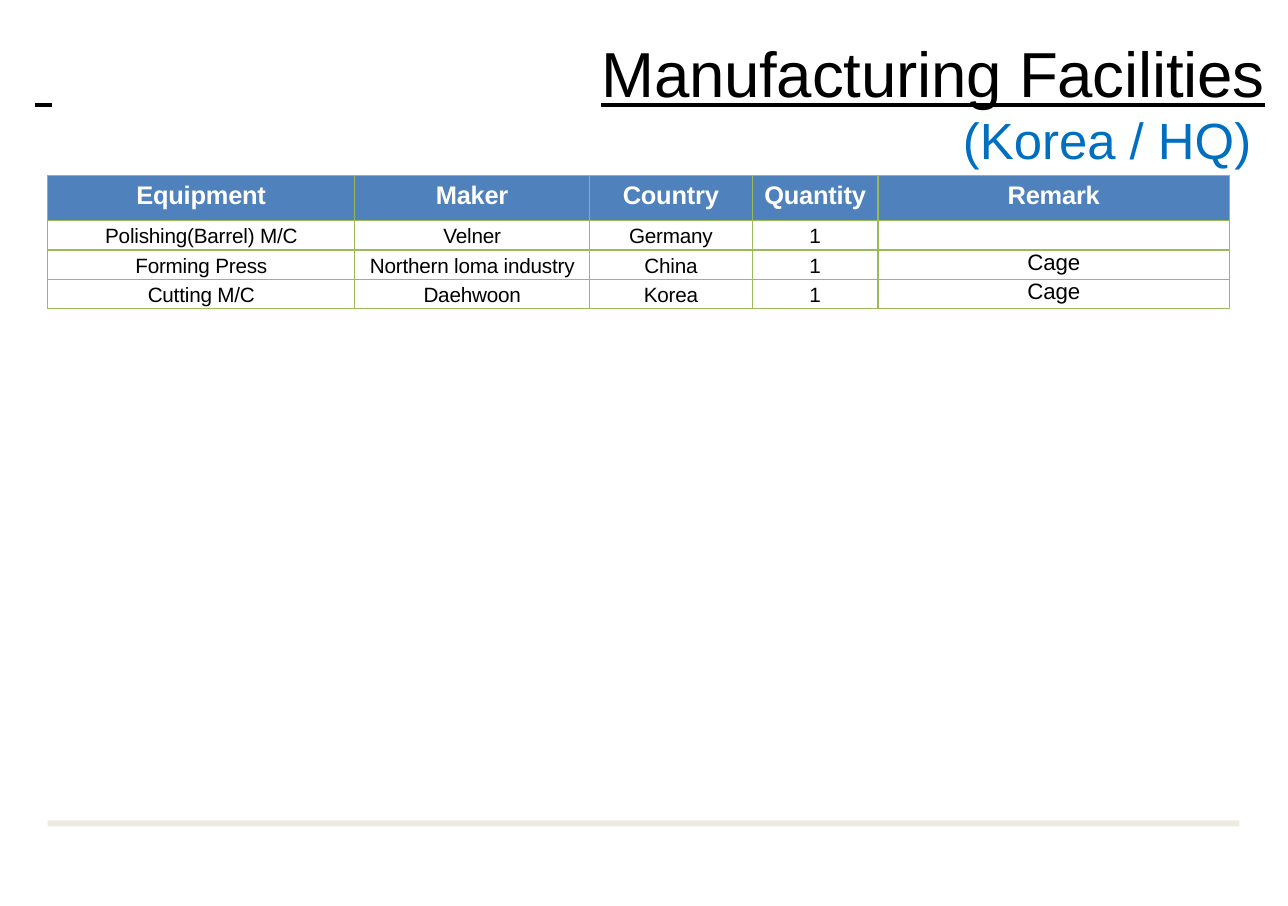
from lxml import etree
from pptx import Presentation
from pptx.dml.color import RGBColor
from pptx.enum.shapes import MSO_SHAPE
from pptx.enum.text import MSO_ANCHOR, MSO_AUTO_SIZE, PP_ALIGN
from pptx.oxml.ns import qn
from pptx.util import Cm, Pt

RECTANGLE = MSO_SHAPE.RECTANGLE
TOP = MSO_ANCHOR.TOP
NO_FIT = MSO_AUTO_SIZE.NONE
LEFT, CENTER, RIGHT = PP_ALIGN.LEFT, PP_ALIGN.CENTER, PP_ALIGN.RIGHT

# Content
TITLE = " \tManufacturing Facilities"
SUBTITLE = "(Korea / HQ)"
HEADER = ("Equipment", "Maker", "Country", "Quantity", "Remark")
MACHINES = [
    ("Polishing(Barrel) M/C", "Velner", "Germany", "1", ""),
    ("Forming Press", "Northern loma industry", "China", "1", "Cage"),
    ("Cutting M/C", "Daehwoon", "Korea", "1", "Cage"),
]
COLUMN_WIDTHS = (6.81, 5.21, 3.61, 2.79, 7.8)
HEADER_HEIGHT, ROW_HEIGHT = 1.01, 0.65
REMARK = len(HEADER) - 1


class Theme:
    font = "Arial"
    black = RGBColor(0x00, 0x00, 0x00)
    white = RGBColor(0xFF, 0xFF, 0xFF)
    blue = RGBColor(0x00, 0x6F, 0xC0)
    header_fill = RGBColor(0x4F, 0x81, 0xBC)
    bar = RGBColor(0xED, 0xEB, 0xE0)
    border = "9BBA58"
    border_width = Pt(1)
    title = {"size": Pt(40), "underline": True, "bold": False}
    subtitle = {"size": Pt(32), "underline": False, "bold": False}
    header = {"size": Pt(16), "bold": True}
    body = {"size": Pt(13), "bold": False}
    remark = {"size": Pt(14), "bold": False}
    tight = "-10"  # letter spacing in hundredths of a point


def set_all(target, values):
    for name, value in values.items():
        setattr(target, name, value)


def write(para, text, color, style, align):
    para.alignment = align
    if not text:  # keeps an empty cell as low as its row
        etree.SubElement(para._p, qn("a:endParaRPr"), sz=str(int(style["size"].pt * 100)))
        return
    span = para.add_run()
    span.text = text
    set_all(span.font, {"name": Theme.font, **style})
    span.font.color.rgb = color
    if style is not Theme.subtitle:
        span._r.get_or_add_rPr().set("spc", Theme.tight)


def add_borders(cell):
    properties = cell._tc.get_or_add_tcPr()
    for position, side in enumerate(("a:lnL", "a:lnR", "a:lnT", "a:lnB")):
        line = etree.Element(qn(side), w=str(Theme.border_width))
        fill = etree.SubElement(line, qn("a:solidFill"))
        etree.SubElement(fill, qn("a:srgbClr"), val=Theme.border)
        properties.insert(position, line)


def add_bar(page):
    bar = page.shapes.add_shape(RECTANGLE, Cm(1.06), Cm(18.21), Cm(26.44), Cm(0.13))
    bar.shadow.inherit = False
    bar.fill.solid()
    bar.fill.fore_color.rgb = Theme.bar
    bar.line.fill.background()


def fill_title(page):
    title = page.shapes.title
    set_all(title, {"left": Cm(0.34), "top": Cm(0.79), "width": Cm(27.89), "height": Cm(3)})
    frame = title.text_frame
    set_all(frame, {"margin_left": 0, "margin_right": 0, "margin_top": Cm(0.03),
                    "margin_bottom": 0, "vertical_anchor": TOP,
                    "auto_size": NO_FIT, "word_wrap": True})

    heading = frame.paragraphs[0]
    properties = heading._p.get_or_add_pPr()
    properties.set("marL", str(Cm(0.43)))
    tabs = etree.SubElement(properties, qn("a:tabLst"))
    etree.SubElement(tabs, qn("a:tab"), pos=str(Cm(12.57)), algn="l")
    heading.line_spacing = Pt(46.4)
    write(heading, TITLE, Theme.black, Theme.title, LEFT)

    location = frame.add_paragraph()
    location._p.get_or_add_pPr().set("marR", str(Cm(0.46)))
    location.line_spacing = Pt(36.8)
    write(location, SUBTITLE, Theme.blue, Theme.subtitle, RIGHT)


def add_equipment_table(page):
    rows = [HEADER, *MACHINES]
    height = HEADER_HEIGHT + ROW_HEIGHT * len(MACHINES)
    table = page.shapes.add_table(len(rows), len(HEADER), Cm(1.06), Cm(3.89),
                                  Cm(sum(COLUMN_WIDTHS)), Cm(height)).table
    for column, width in zip(table.columns, COLUMN_WIDTHS):
        column.width = Cm(width)
    for row_number, row in enumerate(rows):
        is_header = row_number == 0
        table.rows[row_number].height = Cm(HEADER_HEIGHT if is_header else ROW_HEIGHT)
        for column_number, text in enumerate(row):
            cell = table.cell(row_number, column_number)
            if is_header:
                style, color, inset = Theme.header, Theme.white, Cm(0.13)
                cell.fill.solid()
                cell.fill.fore_color.rgb = Theme.header_fill
            else:
                is_remark = column_number == REMARK
                style = Theme.remark if is_remark else Theme.body
                color, inset = Theme.black, Cm(0 if is_remark else 0.1)
                cell.fill.background()
            set_all(cell, {"margin_left": 0, "margin_right": 0, "margin_top": inset,
                           "margin_bottom": 0, "vertical_anchor": TOP})
            add_borders(cell)
            write(cell.text_frame.paragraphs[0], text, color, style, CENTER)


def main():
    deck = Presentation()
    deck.slide_width, deck.slide_height = Pt(810), Pt(570)
    page = deck.slides.add_slide(deck.slide_layouts.get_by_name("Title Only"))
    add_bar(page)
    fill_title(page)
    add_equipment_table(page)
    deck.save("out.pptx")


if __name__ == "__main__":
    main()
